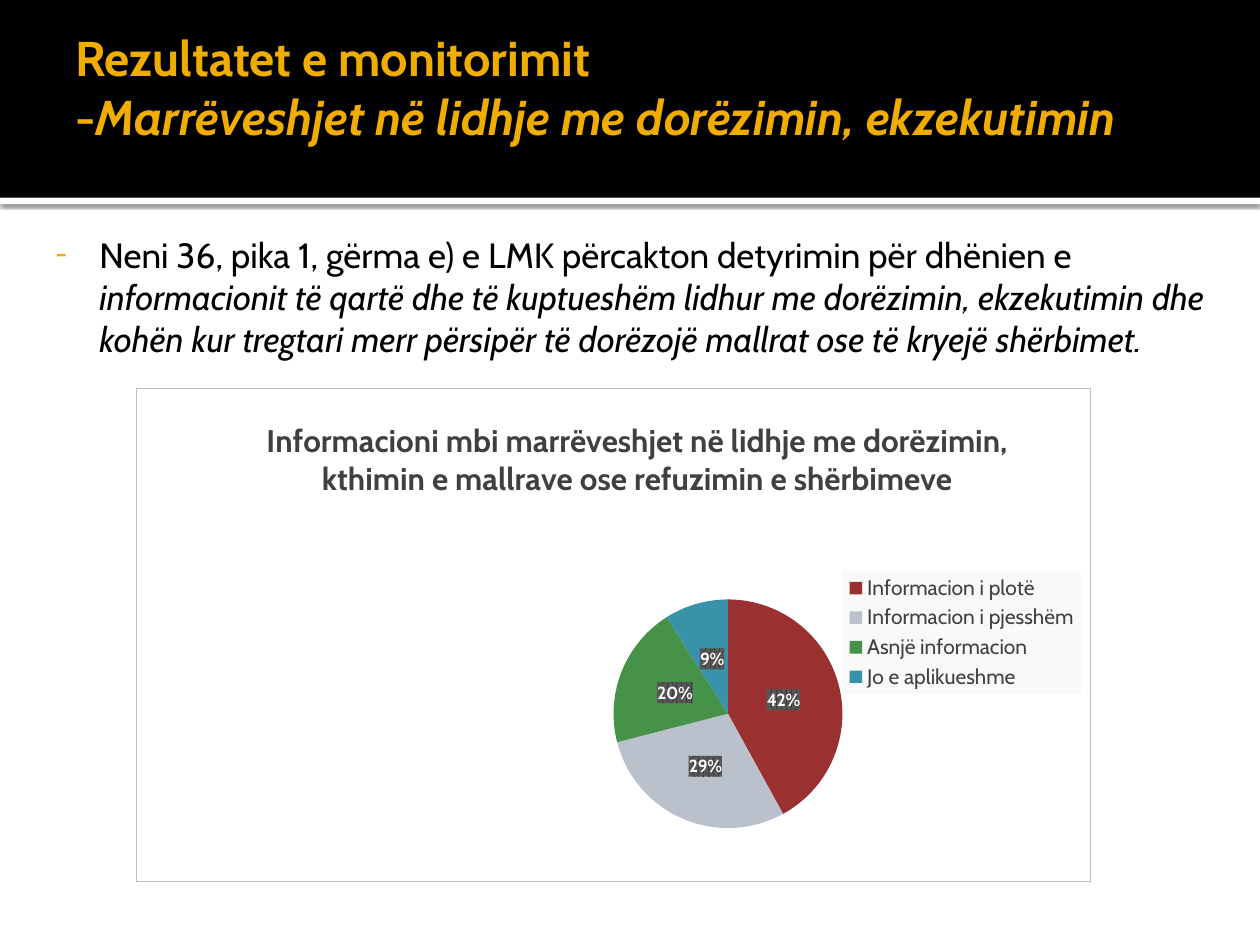
from typing import NamedTuple

from lxml.etree import SubElement
from pptx import Presentation
from pptx.chart.data import CategoryChartData
from pptx.dml.color import RGBColor
from pptx.enum.chart import XL_CHART_TYPE, XL_LABEL_POSITION, XL_LEGEND_POSITION
from pptx.enum.shapes import MSO_SHAPE
from pptx.enum.text import MSO_ANCHOR
from pptx.oxml import parse_xml
from pptx.oxml.ns import nsdecls, qn
from pptx.util import Inches, Pt

FONT = "Cabin"
COLORS = {"black": "000000", "white": "FFFFFF", "gold": "F0AD00", "gray": "404040",
          "border": "BFBFBF", "legend": "F2F2F2", "hatch": "595959",
          "red": "9A3130", "silver": "BAC0CC", "green": "479249", "teal": "3792AA"}


class Band(NamedTuple):
    top: float
    height: float
    color: str


class Run(NamedTuple):
    text: str
    italic: bool = False


class Slice(NamedTuple):
    label: str
    percent: int
    color: str


BANDS = [Band(1.57, 0.05, "white"), Band(0, 1.57, "black")]
TITLE = [Run("Rezultatet e monitorimit\v-"),
         Run("Marrëveshjet në lidhje me dorëzimin, ekzekutimin", True)]
BODY = [Run("Neni 36, pika 1, gërma e) e LMK përcakton detyrimin për dhënien e "),
        Run("informacionit të qartë dhe të kuptueshëm lidhur me dorëzimin, ekzekutimin dhe "
            "kohën kur tregtari merr përsipër të dorëzojë mallrat ose të kryejë shërbimet.", True)]
CHART_TITLE = ("Informacioni mbi marrëveshjet në lidhje me dorëzimin, "
               "kthimin e mallrave ose refuzimin e shërbimeve")
SLICES = [Slice("Informacion i plotë", 42, "red"),
          Slice("Informacion i pjesshëm", 29, "silver"),
          Slice("Asnjë informacion", 20, "green"),
          Slice("Jo e aplikueshme", 9, "teal")]


def rgb(color: str) -> RGBColor:
    """Return the named colour."""
    return RGBColor.from_string(COLORS[color])


def style_font(font, size: float, color: str, bold: bool = False, italic: bool = False) -> None:
    """Format a font."""
    font.name, font.size, font.bold, font.italic = FONT, Pt(size), bold, italic
    font.color.rgb = rgb(color)


def add_text(slide, box: tuple, runs: list[Run], *, size: float, color: str, insets: tuple,
             bold: bool = False, anchor=MSO_ANCHOR.TOP):
    """Add a wrapped one-paragraph text box and return its paragraph."""
    frame = slide.shapes.add_textbox(*map(Inches, box)).text_frame
    frame.word_wrap = True
    frame.vertical_anchor = anchor
    (frame.margin_left, frame.margin_top,
     frame.margin_right, frame.margin_bottom) = map(Inches, insets)
    paragraph = frame.paragraphs[0]
    for part in runs:
        for index, line in enumerate(part.text.split("\v")):
            if index:
                paragraph.add_line_break()
            run = paragraph.add_run()
            run.text = line
            style_font(run.font, size, color, bold, part.italic)
    return paragraph


def add_dash_bullet(paragraph, indent: float, hanging: float) -> None:
    """Give a paragraph a gold dash bullet."""
    properties = paragraph._p.get_or_add_pPr()
    properties.set("marL", str(Inches(indent)))
    properties.set("indent", str(-Inches(hanging)))
    bullet_color = SubElement(properties, qn("a:buClr"))
    SubElement(bullet_color, qn("a:srgbClr"), val=COLORS["gold"])
    SubElement(properties, qn("a:buSzPct"), val="80000")
    SubElement(properties, qn("a:buFont"), typeface=FONT)
    SubElement(properties, qn("a:buChar"), char="-")


def add_band(slide, band: Band):
    """Draw a full-width band."""
    shape = slide.shapes.add_shape(MSO_SHAPE.RECTANGLE, 0, Inches(band.top),
                                   Inches(10), Inches(band.height))
    shape.shadow.inherit = False
    shape.fill.solid()
    shape.fill.fore_color.rgb = rgb(band.color)
    shape.line.fill.background()
    return shape


def add_shadow(shape) -> None:
    """Cast a soft shadow below a shape."""
    effects = shape._element.spPr.find(qn("a:effectLst"))
    shadow = SubElement(effects, qn("a:outerShdw"), blurRad=str(Pt(2.5)), dist=str(Pt(0.8)),
                        dir="5400000", algn="tl", rotWithShape="0")
    color = SubElement(shadow, qn("a:srgbClr"), val=COLORS["black"])
    SubElement(color, qn("a:alpha"), val="60000")


def chart_layout(x: float, y: float, size: tuple = (), inner: bool = False):
    """Return a manual layout in fractions of the chart."""
    target = '<c:layoutTarget val="inner"/>' if inner else ""
    extent = "".join(f'<c:{tag} val="{value}"/>' for tag, value in zip("wh", size))
    return parse_xml(f'<c:layout {nsdecls("c")}><c:manualLayout>{target}'
                     '<c:xMode val="edge"/><c:yMode val="edge"/>'
                     f'<c:x val="{x}"/><c:y val="{y}"/>{extent}</c:manualLayout></c:layout>')


def set_layout(element, layout, after: str) -> None:
    """Replace the layout of a chart part."""
    for old in element.findall(qn("c:layout")):
        element.remove(old)
    if after:
        element.findall(qn(after))[-1].addnext(layout)
    else:
        element.insert(0, layout)


def chart_fill(fill: str, outline: str = "<a:ln><a:noFill/></a:ln>"):
    """Return shape properties for a chart part."""
    return parse_xml(f'<c:spPr {nsdecls("c", "a")}>{fill}{outline}</c:spPr>')


def solid(color: str, alpha: int = 100) -> str:
    """Return a solid fill as XML."""
    return (f'<a:solidFill><a:srgbClr val="{COLORS[color]}">'
            f'<a:alpha val="{alpha * 1000}"/></a:srgbClr></a:solidFill>')


def add_pie(slide) -> None:
    """Add the pie chart with title, legend and percent labels."""
    data = CategoryChartData()
    data.categories = [part.label for part in SLICES]
    data.add_series("Series 1", [part.percent for part in SLICES])
    chart = slide.shapes.add_chart(XL_CHART_TYPE.PIE, Inches(1.08), Inches(3.08),
                                   Inches(7.58), Inches(3.92), data).chart
    style_font(chart.font, 10, "black")
    border = f'<a:ln w="{Pt(0.75)}">{solid("border")}</a:ln>'
    chart._chartSpace.chart.addnext(chart_fill(solid("white"), border))

    chart.has_title = True
    heading = chart.chart_title.text_frame.paragraphs[0].add_run()
    heading.text = CHART_TITLE
    style_font(heading.font, 18, "gray", bold=True)
    set_layout(chart.chart_title._element, chart_layout(0.13, 0.05), "c:tx")

    chart.has_legend = True
    legend = chart.legend
    legend.position = XL_LEGEND_POSITION.RIGHT
    legend.include_in_layout = False
    style_font(legend.font, 12, "gray")
    set_layout(legend._element, chart_layout(0.74, 0.37, (0.25, 0.25)), "c:legendPos")
    legend._element.find(qn("c:txPr")).addprevious(chart_fill(solid("legend", 39)))

    plot = chart.plots[0]
    plot.vary_by_categories = True
    set_layout(chart._chartSpace.chart.plotArea,
               chart_layout(0.5, 0.39, (0.24, 0.54), inner=True), "")
    series = plot.series[0]
    for index, part in enumerate(SLICES):
        point = series.points[index].format
        point.fill.solid()
        point.fill.fore_color.rgb = rgb(part.color)
        point.line.fill.background()

    labels = series.data_labels
    labels.show_percentage, labels.show_value = True, False
    labels.number_format, labels.number_format_is_linked = "0%", False
    labels.position = XL_LABEL_POSITION.CENTER
    style_font(labels.font, 10, "white", bold=True)
    hatch = (f'<a:pattFill prst="pct75"><a:fgClr><a:srgbClr val="{COLORS["gray"]}"/></a:fgClr>'
             f'<a:bgClr><a:srgbClr val="{COLORS["hatch"]}"/></a:bgClr></a:pattFill>')
    labels._element.find(qn("c:txPr")).addprevious(chart_fill(hatch))


def main() -> None:
    """Build the slide."""
    presentation = Presentation()
    presentation.slide_width, presentation.slide_height = Inches(10), Inches(7.5)
    slide = presentation.slides.add_slide(presentation.slide_layouts[6])
    rule, _ = [add_band(slide, band) for band in BANDS]
    add_shadow(rule)
    add_text(slide, (0.5, 0.5, 9, 1.04), TITLE, size=27.9, color="gold", bold=True,
             insets=(0.1, 0.05, 0.05, 0.72), anchor=MSO_ANCHOR.MIDDLE)
    body = add_text(slide, (0.25, 1.75, 9.5, 5.25), BODY, size=20, color="black",
                    insets=(0.06, 0.1, 0.1, 0.05))
    add_dash_bullet(body, 0.48, 0.35)
    add_pie(slide)
    presentation.save("out.pptx")


if __name__ == "__main__":
    main()
